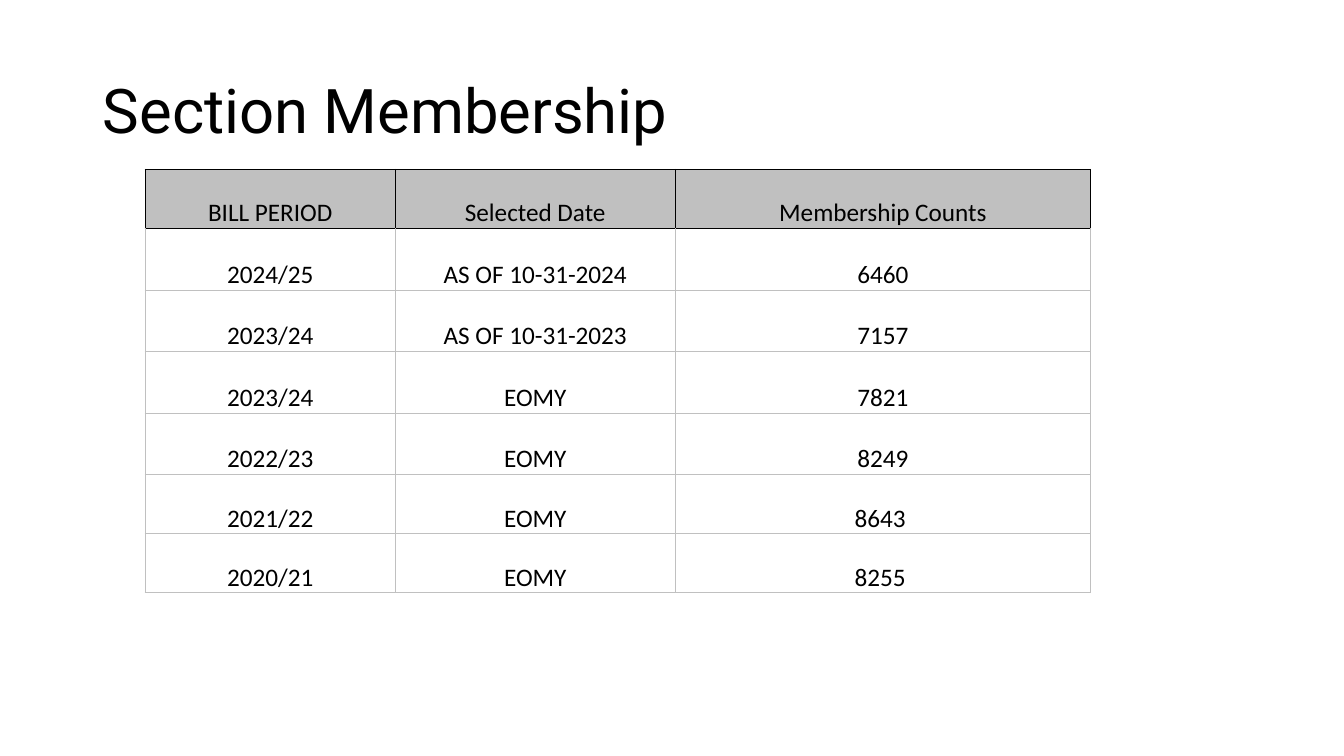
from typing import NamedTuple

from pptx import Presentation
from pptx.dml.color import RGBColor
from pptx.enum.text import MSO_ANCHOR as Anchor, PP_ALIGN as Align
from pptx.oxml.ns import qn
from pptx.util import Cm, Pt
from lxml.etree import SubElement

COLORS = {"text": "000000", "header": "C0C0C0", "grid": "C0C0C0", "frame": "000000"}
COLUMN_WIDTHS = (6.3, 7.06, 10.46)


class Row(NamedTuple):
    period: str
    date: str
    count: str
    height: float


ROWS = [
    Row("BILL PERIOD", "Selected Date", "Membership Counts", 1.49),
    Row("2024/25", "AS OF 10-31-2024", "6460", 1.55),
    Row("2023/24", "AS OF 10-31-2023", "7157", 1.55),
    Row("2023/24", "EOMY", "7821", 1.55),
    Row("2022/23", "EOMY", "8249", 1.55),
    Row("2021/22", "EOMY", "8643 ", 1.49),
    Row("2020/21", "EOMY", "8255 ", 1.49),
]


def add_run(p, text: str, font: str, size: float) -> None:
    r = p.add_run()
    r.text = text
    r.font.name = font
    r.font.size = Pt(size)
    r.font.color.rgb = RGBColor.from_string(COLORS["text"])


def set_borders(cell, color: str, top: str) -> None:
    """Draw 1 pt cell borders; these must come before the fill in tcPr."""
    tc_pr = cell._tc.get_or_add_tcPr()
    sides = {"a:lnL": color, "a:lnR": color, "a:lnT": top, "a:lnB": color}
    for tag, side_color in sides.items():
        ln = SubElement(tc_pr, qn(tag), w=str(Pt(1)))
        fill = SubElement(ln, qn("a:solidFill"))
        SubElement(fill, qn("a:srgbClr"), val=side_color)


def format_cell(cell, text: str, row_index: int) -> None:
    is_header = row_index == 0
    cell.margin_left = cell.margin_right = Cm(0.18)
    cell.margin_top = cell.margin_bottom = 0
    cell.vertical_anchor = Anchor.BOTTOM
    set_borders(
        cell,
        COLORS["frame" if is_header else "grid"],
        COLORS["frame" if row_index <= 1 else "grid"],
    )
    if is_header:
        cell.fill.solid()
        cell.fill.fore_color.rgb = RGBColor.from_string(COLORS["header"])
    else:
        cell.fill.background()
    p = cell.text_frame.paragraphs[0]
    p.alignment = Align.CENTER
    add_run(p, text, "Calibri", 18)


def add_title(s, text: str) -> None:
    sp = s.shapes.title
    sp.left, sp.top, sp.width, sp.height = Cm(2.34), Cm(1.02), Cm(29.21), Cm(3.68)
    tf = sp.text_frame
    tf.vertical_anchor = Anchor.MIDDLE
    p = tf.paragraphs[0]
    p.alignment = Align.LEFT
    p.line_spacing = 0.9
    add_run(p, text, "Roboto", 44)


def add_membership_table(s) -> None:
    table = s.shapes.add_table(
        len(ROWS), len(COLUMN_WIDTHS), Cm(3.66), Cm(4.27),
        Cm(sum(COLUMN_WIDTHS)), Cm(sum(row.height for row in ROWS)),
    ).table
    table.first_row = table.horz_banding = False
    for column, width in zip(table.columns, COLUMN_WIDTHS):
        column.width = Cm(width)
    for i, row in enumerate(ROWS):
        table.rows[i].height = Cm(row.height)
        for j, text in enumerate((row.period, row.date, row.count)):
            format_cell(table.cell(i, j), text, i)


def main() -> None:
    prs = Presentation()
    prs.slide_width, prs.slide_height = Cm(33.87), Cm(19.05)
    s = prs.slides.add_slide(prs.slide_layouts.get_by_name("Title Only"))
    add_title(s, "Section Membership")
    add_membership_table(s)
    prs.save("out.pptx")


if __name__ == "__main__":
    main()
